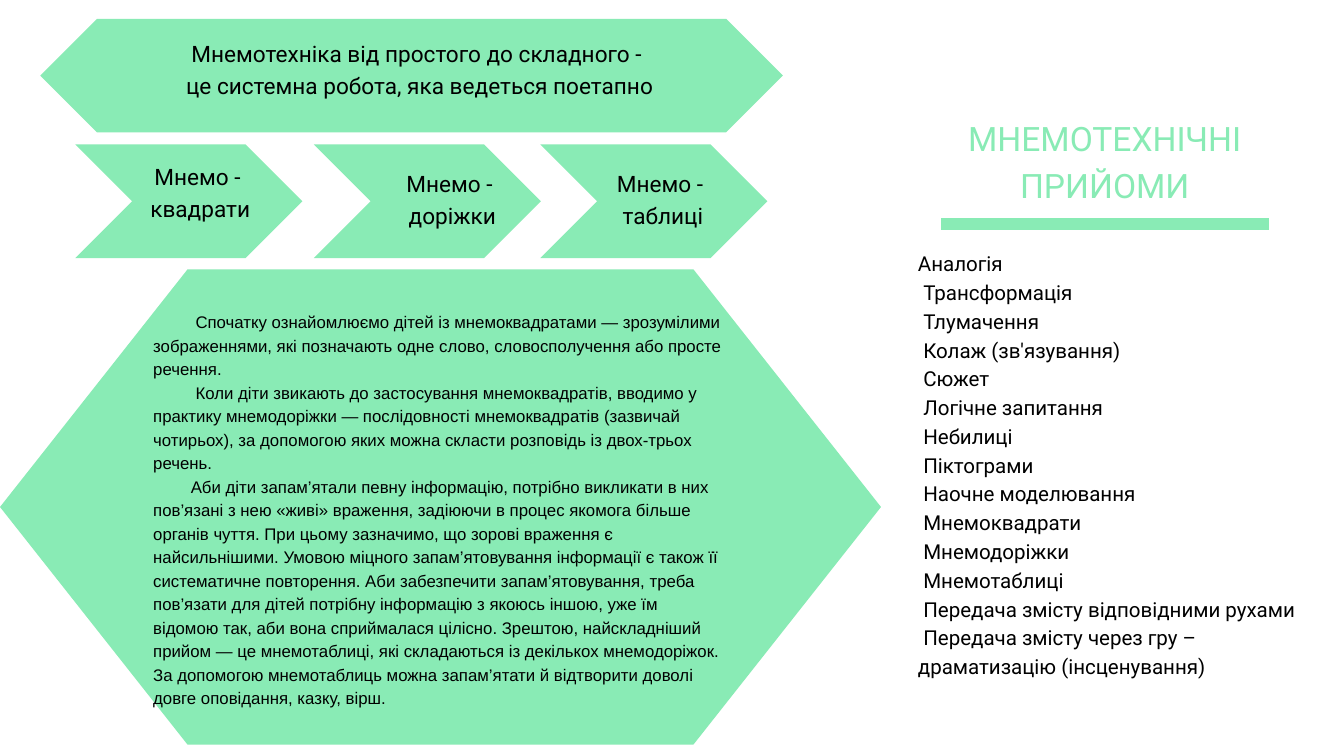
from lxml import etree
from pptx import Presentation
from pptx.dml.color import RGBColor
from pptx.enum.shapes import MSO_CONNECTOR, MSO_SHAPE
from pptx.enum.text import MSO_ANCHOR, MSO_AUTO_SIZE, PP_ALIGN
from pptx.oxml.ns import qn
from pptx.util import Inches, Pt

HEXAGON, CHEVRON = MSO_SHAPE.HEXAGON, MSO_SHAPE.CHEVRON
LEFT, CENTER = PP_ALIGN.LEFT, PP_ALIGN.CENTER
MINT = RGBColor(0x89, 0xEB, 0xB5)
BLACK = RGBColor(0, 0, 0)
LINE_SPACING = 1.4

TITLE = "МНЕМОТЕХНІЧНІ ПРИЙОМИ"
TECHNIQUES = [
    "Аналогія",
    "Трансформація",
    "Тлумачення",
    "Колаж (зв'язування)",
    "Сюжет",
    "Логічне запитання",
    "Небилиці",
    "Піктограми",
    "Наочне моделювання",
    "Мнемоквадрати",
    "Мнемодоріжки",
    "Мнемотаблиці",
    "Передача змісту відповідними рухами",
    "Передача змісту через гру – драматизацію (інсценування)",
]
HEADLINE = [
    "Мнемотехніка від простого до складного - ",
    "це системна робота, яка ведеться поетапно",
]
# Chevron left edge, label box (left, top, width), label lines
STAGES = [
    (1.12, (1.29, 2.36, 3.38), ["Мнемо - ", "квадрати"]),
    (4.67, (5, 2.46, 3.38), ["Мнемо -", " доріжки"]),
    (8.04, (9.08, 2.46, 1.57), ["Мнемо - ", "таблиці"]),
]
EXPLANATION = [
    "Спочатку ознайомлюємо дітей із мнемоквадратами — зрозумілими зображеннями, "
    "які позначають одне слово, словосполучення або просте речення.",
    "Коли діти звикають до застосування мнемоквадратів, вводимо у практику "
    "мнемодоріжки — послідовності мнемоквадратів (зазвичай чотирьох), за допомогою "
    "яких можна скласти розповідь із двох-трьох речень.",
    "Аби діти запам’ятали певну інформацію, потрібно викликати в них пов’язані з нею "
    "«живі» враження, задіюючи в процес якомога більше органів чуття. При цьому "
    "зазначимо, що зорові враження є найсильнішими. Умовою міцного запам’ятовування "
    "інформації є також її систематичне повторення. Аби забезпечити запам’ятовування, "
    "треба пов’язати для дітей потрібну інформацію з якоюсь іншою, уже їм відомою так, "
    "аби вона сприймалася цілісно. Зрештою, найскладніший прийом — це мнемотаблиці, "
    "які складаються із декількох мнемодоріжок. За допомогою мнемотаблиць можна "
    "запам’ятати й відтворити доволі довге оповідання, казку, вірш.",
]


def place(shape, left, top, width, height):
    shape.left, shape.top = Inches(left), Inches(top)
    shape.width, shape.height = Inches(width), Inches(height)


def add_mint_shape(page, kind, area, point):
    """Add a filled shape; point is the depth of its tip relative to its height."""
    shape = page.shapes.add_shape(kind, *map(Inches, area))
    shape.adjustments[0] = point
    shape.shadow.inherit = False
    shape.fill.solid()
    shape.fill.fore_color.rgb = MINT
    shape.line.fill.background()


def write(box, lines, size, font="Roboto", color=BLACK, align=LEFT, indents=None):
    """Fill a box with paragraphs; indents are first-line indents in inches."""
    frame = box.text_frame
    frame.word_wrap = True
    frame.auto_size = MSO_AUTO_SIZE.NONE
    frame.vertical_anchor = MSO_ANCHOR.TOP
    frame.margin_left = frame.margin_top = frame.margin_right = frame.margin_bottom = 0
    for index, line in enumerate(lines):
        para = frame.paragraphs[0] if index == 0 else frame.add_paragraph()
        para.alignment = align
        para.line_spacing = Pt(round(size * LINE_SPACING, 1))
        para.space_before = Pt(0)
        if indents and indents[index]:
            para._p.get_or_add_pPr().set("indent", str(Inches(indents[index])))
        span = para.add_run()
        span.text = line
        span.font.size = Pt(size)
        span.font.name = font
        span.font.color.rgb = color


def add_text(page, area, lines, size, **style):
    write(page.shapes.add_textbox(*map(Inches, area)), lines, size, **style)


def add_rule(page, left, right, y):
    rule = page.shapes.add_connector(
        MSO_CONNECTOR.STRAIGHT, Inches(left), Inches(y), Inches(right), Inches(y))
    rule.line.color.rgb = MINT
    rule.line.width = Pt(12.75)
    etree.SubElement(rule._element.spPr, qn("a:effectLst"))


def main():
    deck = Presentation()
    deck.slide_width, deck.slide_height = Inches(20), Inches(11.25)
    page = deck.slides.add_slide(deck.slide_layouts[5])

    title = page.shapes.title
    place(title, 13.19, 1.65, 6.5, 1.45)
    write(title, [TITLE], 36, color=MINT, align=CENTER)
    add_rule(page, 14.01, 18.88, 3.33)
    add_text(page, (13.66, 3.68, 5.95, 6.87), TECHNIQUES, 22,
             indents=[0] + [0.08] * (len(TECHNIQUES) - 1))

    add_mint_shape(page, HEXAGON, (0.6, 0.28, 11.05, 1.69), 0.5)
    add_text(page, (2.37, 0.53, 7.75, 0.92), HEADLINE, 24.2, align=CENTER)

    for left, _, _ in STAGES:
        add_mint_shape(page, CHEVRON, (left, 2.15, 3.38, 1.69), 0.5)
    for _, label_area, label in STAGES:
        add_text(page, (*label_area, 0.96), label, 24.2, align=CENTER)

    add_mint_shape(page, HEXAGON, (0, 4.01, 13.11, 7.07), 2.79 / 7.07)
    add_text(page, (2.28, 4.59, 8.54, 6.28), EXPLANATION, 18, font="Arial",
             indents=[0.63, 0.63, 0.56])

    deck.save("out.pptx")


if __name__ == "__main__":
    main()
